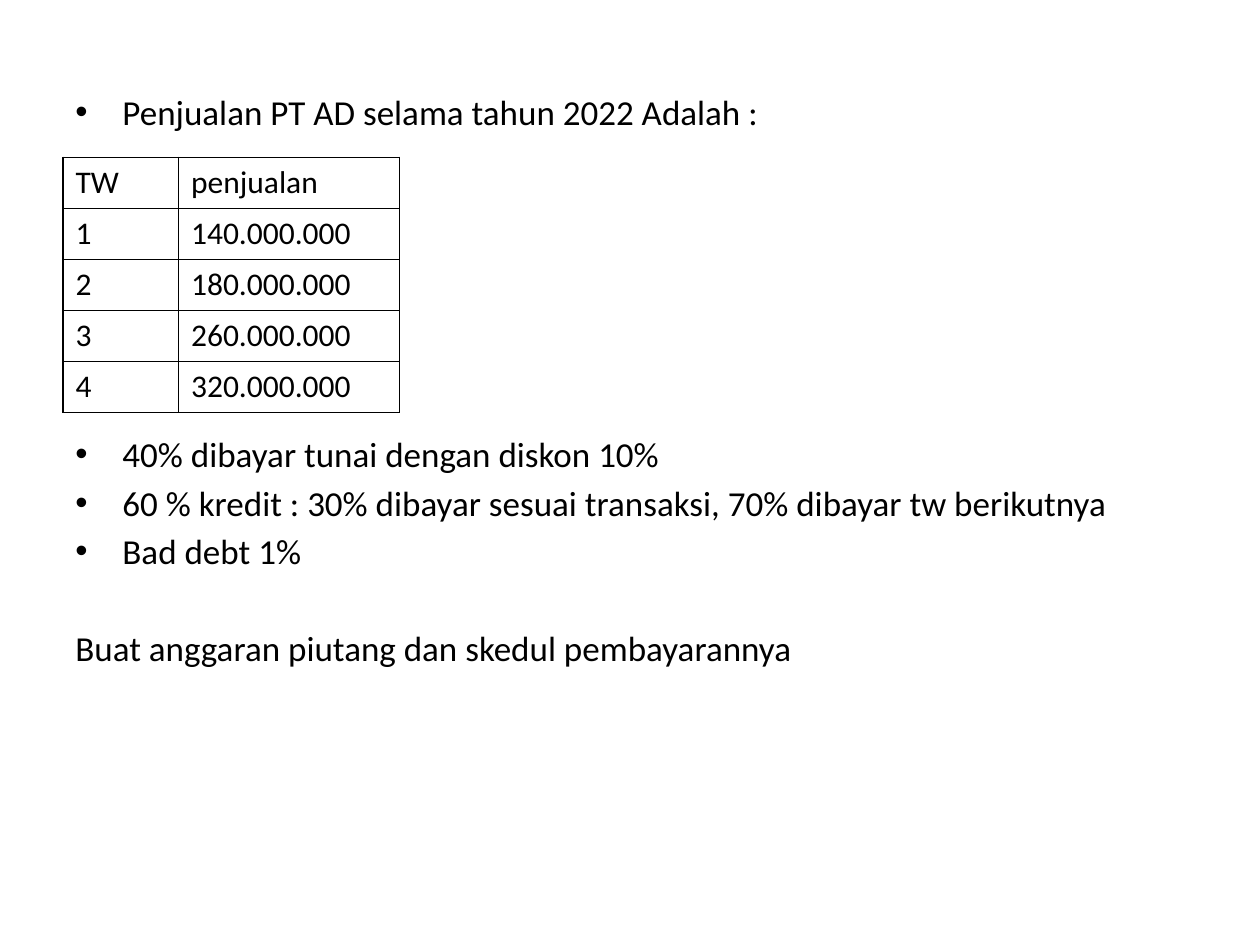
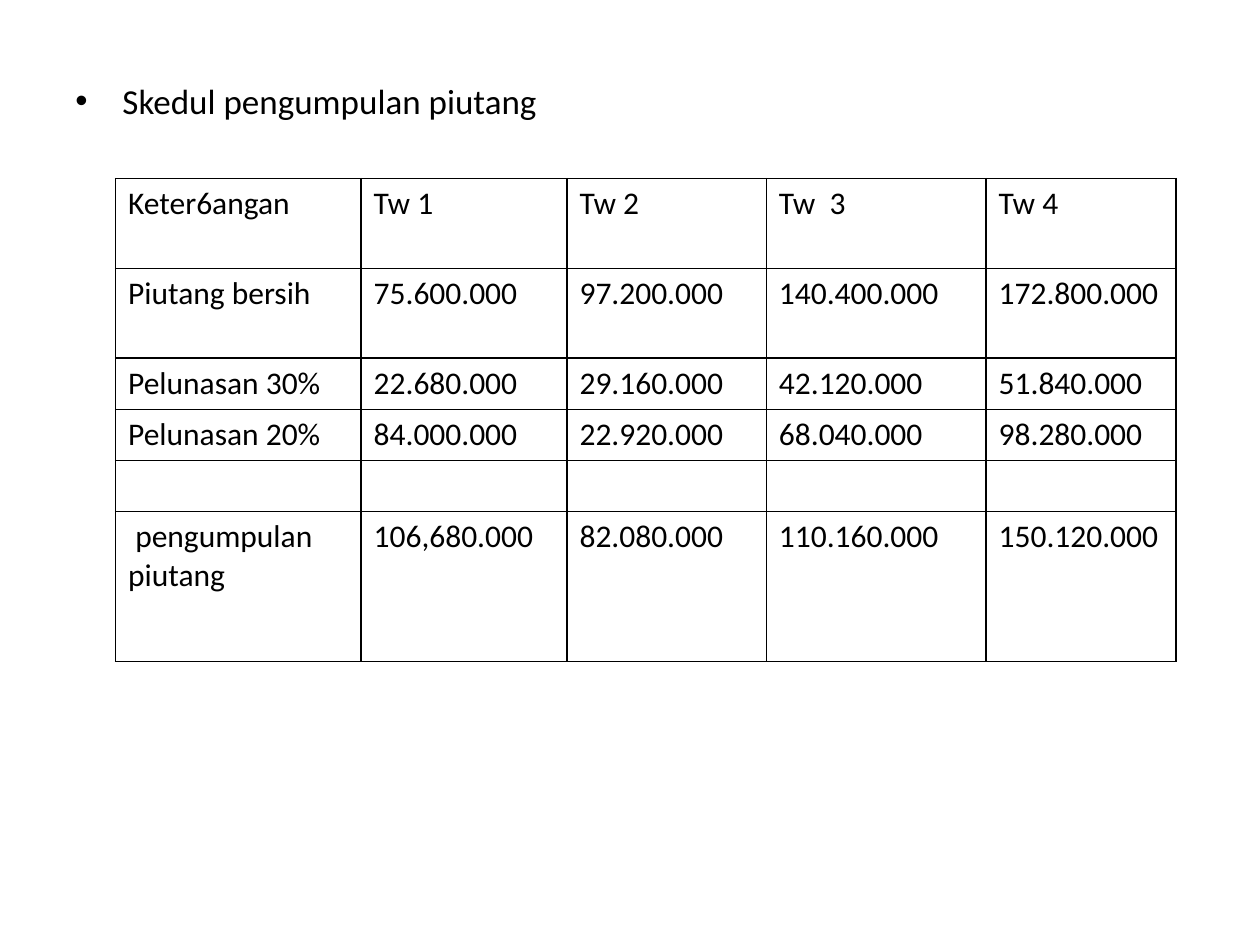
import pptx
import pptx.dml.color
import pptx.oxml
import pptx.oxml.ns
import pptx.util

Cm = pptx.util.Cm
Pt = pptx.util.Pt

COLORS = {"ink": "000000", "paper": "FFFFFF"}
FONT = "Calibri"
BODY_SIZE = 20
TABLE_SIZE = 18
LINE_GAP = 3.6
BORDER_WIDTH = 1
BULLET_INDENT = Cm(0.95)


def rgb(name):
    return pptx.dml.color.RGBColor.from_string(COLORS[name])


def add_xml(parent, tag, content="", **attributes):
    """Append a DrawingML element with the given attributes and inner XML."""
    pairs = " ".join(f'{key}="{value}"' for key, value in attributes.items())
    namespace = pptx.oxml.ns.nsdecls("a")
    parent.append(pptx.oxml.parse_xml(
        f"<a:{tag} {namespace} {pairs}>{content}</a:{tag}>"))


def write(para, text, size=BODY_SIZE, color="ink", before=0, bullet=False):
    para.space_before = Pt(before)
    if bullet:
        properties = para._p.get_or_add_pPr()
        properties.set("marL", str(BULLET_INDENT))
        properties.set("indent", str(-BULLET_INDENT))
        add_xml(properties, "buFont", typeface="Arial")
        add_xml(properties, "buChar", char="•")
    span = para.add_run()
    span.text = text
    span.font.name = FONT
    span.font.size = Pt(size)
    span.font.color.rgb = rgb(color)


class Deck:
    """Holds the presentation, its style and the current page."""

    def __init__(self):
        self.file = pptx.Presentation()
        self.file.slide_width = Cm(25.4)
        self.file.slide_height = Cm(19.05)
        self.page = None

    def add_page(self):
        self.page = self.file.slides.add_slide(self.file.slide_layouts[6])
        self.page.background.fill.solid()
        self.page.background.fill.fore_color.rgb = rgb("paper")

    def add_body(self, top, height, lines):
        """Add the body text; each line is a text and its format."""
        box = self.page.shapes.add_textbox(Cm(1.27), Cm(top), Cm(22.86), Cm(height))
        frame = box.text_frame
        frame.word_wrap = True
        for index, (text, style) in enumerate(lines):
            para = frame.add_paragraph() if index else frame.paragraphs[0]
            write(para, text, **{"before": LINE_GAP, **style})

    def add_table(self, left, top, widths, heights, rows):
        table = self.page.shapes.add_table(
            len(rows), len(widths), Cm(left), Cm(top),
            Cm(sum(widths)), Cm(sum(heights))).table
        table.first_row = table.horz_banding = False
        for column, width in zip(table.columns, widths):
            column.width = Cm(width)
        for row, height, texts in zip(table.rows, heights, rows):
            row.height = Cm(height)
            for cell, text in zip(row.cells, texts):
                self.fill_cell(cell, text)

    def fill_cell(self, cell, text):
        line_fill = f'<a:solidFill><a:srgbClr val="{COLORS["ink"]}"/></a:solidFill>'
        properties = cell._tc.get_or_add_tcPr()
        for side in "LRTB":
            add_xml(properties, f"ln{side}", line_fill, w=Pt(BORDER_WIDTH))
        cell.fill.background()
        for index, line in enumerate(text.split("\n") if text else []):
            frame = cell.text_frame
            para = frame.add_paragraph() if index else frame.paragraphs[0]
            write(para, line, size=TABLE_SIZE)


def add_sales_page(deck):
    deck.add_page()
    bullet = {"bullet": True}
    deck.add_body(1.7, 15.32, [
        ("Penjualan PT AD selama tahun 2022 Adalah :", bullet),
        ("40% dibayar tunai dengan diskon 10%", {"bullet": True, "before": 171.6}),
        ("60 % kredit : 30% dibayar sesuai transaksi, 70% dibayar tw berikutnya", bullet),
        ("Bad debt 1%", bullet),
        ("Buat anggaran piutang dan skedul pembayarannya", {"before": 31.6}),
    ])
    sales = ["140.000.000", "180.000.000", "260.000.000", "320.000.000"]
    rows = [("TW", "penjualan")]
    rows += [(str(quarter), amount) for quarter, amount in enumerate(sales, 1)]
    deck.add_table(1.27, 3.17, [2.33, 4.45], [1.03] * len(rows), rows)


def add_collection_page(deck):
    deck.add_page()
    deck.add_body(1.48, 15.54, [("Skedul pengumpulan piutang", {"bullet": True})])
    rows = [
        ("Keter6angan", "Tw 1", "Tw 2", "Tw  3", "Tw 4"),
        ("Piutang bersih", "75.600.000", "97.200.000", "140.400.000", "172.800.000"),
        ("Pelunasan 30%", "22.680.000", "29.160.000", "42.120.000", "51.840.000"),
        ("Pelunasan 20%", "84.000.000", "22.920.000", "68.040.000", "98.280.000"),
        ("",) * 5,
        (" pengumpulan\npiutang", "106,680.000", "82.080.000", "110.160.000", "150.120.000"),
    ]
    deck.add_table(2.33, 3.6, [4.95, 4.15, 4.02, 4.43, 3.83],
                   [1.81] * 2 + [1.03] * 3 + [3.03], rows)


def main():
    deck = Deck()
    add_sales_page(deck)
    add_collection_page(deck)
    deck.file.save("out.pptx")


if __name__ == "__main__":
    main()
